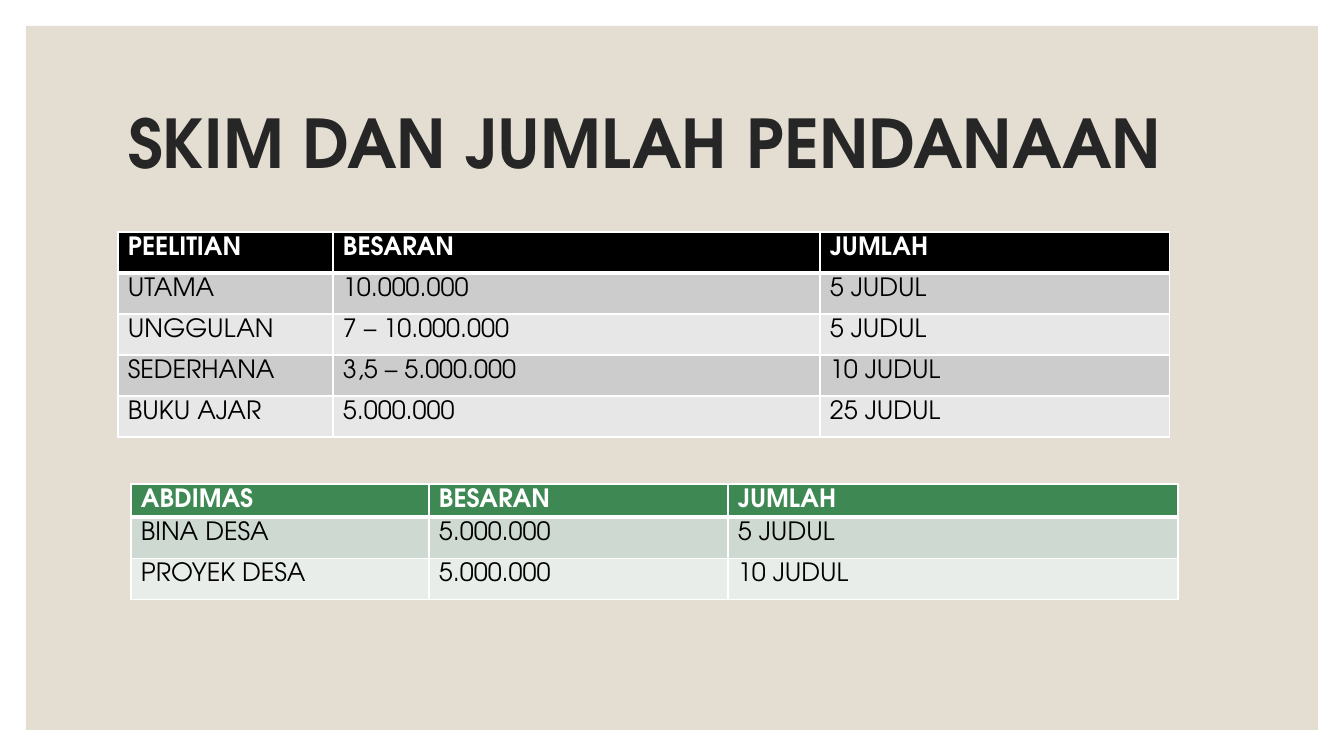
from lxml.etree import SubElement
from pptx import Presentation
from pptx.dml.color import RGBColor
from pptx.enum.shapes import MSO_SHAPE as Shape
from pptx.enum.text import MSO_ANCHOR as Anchor, PP_ALIGN as Align
from pptx.oxml.ns import qn
from pptx.util import Pt

FONT = "TeX Gyre Adventor"
WHITE = RGBColor(0xFF, 0xFF, 0xFF)
BLACK = RGBColor(0x00, 0x00, 0x00)
INK = RGBColor(0x26, 0x26, 0x26)
SAND = RGBColor(0xE3, 0xDE, 0xD1)
GREEN = RGBColor(0x3E, 0x88, 0x53)
GREY_BANDS = (RGBColor(0xCC, 0xCC, 0xCC), RGBColor(0xE7, 0xE7, 0xE7))
GREEN_BANDS = (RGBColor(0xCE, 0xDA, 0xD1), RGBColor(0xE8, 0xED, 0xE9))

SLIDE_SIZE = (1344, 756)
PANEL_BOX = (26, 26, 1292, 704)
TITLE_BOX = (118, 71, 1109, 151)
TITLE = "SKIM DAN JUMLAH PENDANAAN"
ROW_HEIGHT = 41

FUNDING_TABLES = [
    {
        "origin": (118, 232),
        "columns": (215, 487, 350),
        "header_height": 41,
        "header_fill": BLACK,
        "bands": GREY_BANDS,
        "rows": [
            ("PEELITIAN", "BESARAN", "JUMLAH"),
            ("UTAMA", "10.000.000", "5 JUDUL"),
            ("UNGGULAN", "7 – 10.000.000", "5 JUDUL"),
            ("SEDERHANA", "3,5 – 5.000.000", "10 JUDUL"),
            ("BUKU AJAR", "5.000.000", "25 JUDUL"),
        ],
    },
    {
        "origin": (131, 484),
        "columns": (298, 299, 450),
        "header_height": 33,
        "header_fill": GREEN,
        "bands": GREEN_BANDS,
        "rows": [
            ("ABDIMAS", "BESARAN", "JUMLAH"),
            ("BINA DESA", "5.000.000", "5 JUDUL"),
            ("PROYEK DESA", "5.000.000", "10 JUDUL"),
        ],
    },
]


def px(length):
    return round(length * 914400 / 100.8)


def set_attributes(target, values):
    for name, value in values.items():
        setattr(target, name, value)


def write(para, text, size, color, bold):
    span = para.add_run()
    span.text = text
    set_attributes(span.font, {"name": FONT, "size": Pt(size), "bold": bold})
    span.font.color.rgb = color


def add_borders(cell, widths):
    """Draw white cell edges; widths maps L, R, T and B to points."""
    properties = cell._tc.get_or_add_tcPr()
    for side, width in widths.items():
        line = SubElement(properties, qn(f"a:ln{side}"), w=str(Pt(width)))
        fill = SubElement(line, qn("a:solidFill"))
        SubElement(fill, qn("a:srgbClr"), val=str(WHITE))


def format_cell(cell, text, row, fill):
    is_header = row == 0
    set_attributes(cell, {"margin_left": px(10), "margin_right": px(10),
                          "margin_top": px(5), "margin_bottom": px(5),
                          "vertical_anchor": Anchor.TOP})
    add_borders(cell, {"L": 1, "R": 1, "T": 3 if row == 1 else 1,
                       "B": 3 if is_header else 1})
    cell.fill.solid()
    cell.fill.fore_color.rgb = fill
    write(cell.text_frame.paragraphs[0], text, 18,
          WHITE if is_header else BLACK, is_header)


def add_funding_table(page, content):
    rows, columns = content["rows"], content["columns"]
    heights = [content["header_height"]] + [ROW_HEIGHT] * (len(rows) - 1)
    box = (*content["origin"], sum(columns), sum(heights))
    table = page.shapes.add_table(len(rows), len(columns), *map(px, box)).table
    for column, width in zip(table.columns, columns):
        column.width = px(width)
    for index, (height, texts) in enumerate(zip(heights, rows)):
        table.rows[index].height = px(height)
        fill = content["bands"][(index - 1) % 2] if index else content["header_fill"]
        for cell, text in zip(table.rows[index].cells, texts):
            format_cell(cell, text, index, fill)


def add_panel(page):
    panel = page.shapes.add_shape(Shape.RECTANGLE, *map(px, PANEL_BOX))
    panel.shadow.inherit = False
    panel.fill.solid()
    panel.fill.fore_color.rgb = SAND
    panel.line.fill.background()
    page.shapes.title.element.addprevious(panel.element)


def format_title(title):
    set_attributes(title, dict(zip(("left", "top", "width", "height"),
                                   map(px, TITLE_BOX))))
    set_attributes(title.text_frame, {"word_wrap": True,
                                      "vertical_anchor": Anchor.MIDDLE})
    para = title.text_frame.paragraphs[0]
    set_attributes(para, {"alignment": Align.LEFT, "line_spacing": 0.9})
    write(para, TITLE, 48, INK, True)


def main():
    deck = Presentation()
    deck.slide_width, deck.slide_height = map(px, SLIDE_SIZE)
    page = deck.slides.add_slide(deck.slide_layouts.get_by_name("Title Only"))
    add_panel(page)
    format_title(page.shapes.title)
    for content in FUNDING_TABLES:
        add_funding_table(page, content)
    deck.save("out.pptx")


if __name__ == "__main__":
    main()
